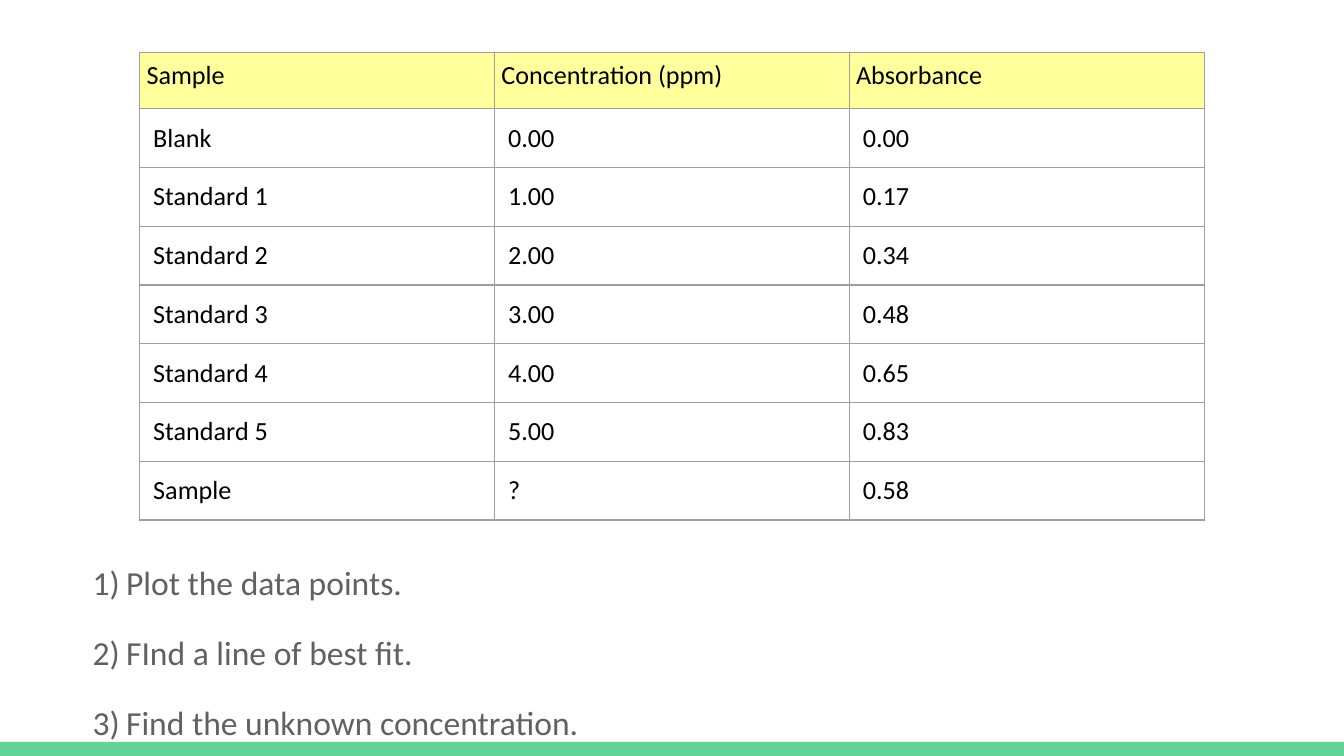
from lxml import etree
from pptx import Presentation, util as u
from pptx.dml.color import RGBColor
from pptx.enum import shapes
from pptx.oxml import ns

W = u.Inches(10)
H = W * 9 // 16
FONT = "Calibri"
GREEN = RGBColor(0x63, 0xD2, 0x97)
YELLOW = RGBColor(0xFF, 0xFF, 0x9C)
BLACK = RGBColor(0, 0, 0)
GREY = RGBColor(0x61, 0x61, 0x61)
BORDER = RGBColor(0x9E, 0x9E, 0x9E)

COL_WIDTH, ROW_HEIGHT = u.Inches(2.64), u.Inches(0.42)
READINGS = [
    ("Sample", "Concentration (ppm)", "Absorbance"),
    ("Blank", "0.00", "0.00"),
    ("Standard 1", "1.00", "0.17"),
    ("Standard 2", "2.00", "0.34"),
    ("Standard 3", "3.00", "0.48"),
    ("Standard 4", "4.00", "0.65"),
    ("Standard 5", "5.00", "0.83"),
    ("Sample", "?", "0.58"),
]
STEPS = ["Plot the data points.", "FInd a line of best fit.",
         "Find the unknown concentration."]


def set_font(p, size, color):
    p.font.name, p.font.size = FONT, u.Pt(size)
    p.font.color.rgb = color


def set_margins(box, inches):
    """Give a cell or a text frame the same inset on all sides."""
    box.margin_left = box.margin_right = u.Inches(inches)
    box.margin_top = box.margin_bottom = u.Inches(inches)


def add_footer_bar(s):
    top = u.Inches(5.52)
    sp = s.shapes.add_shape(shapes.MSO_SHAPE.RECTANGLE, 0, top, W, H - top)
    sp.shadow.inherit = False
    sp.fill.solid()
    sp.fill.fore_color.rgb = GREEN
    sp.line.fill.background()


def add_borders(cell):
    """Draw a thin line on each side; lines must precede the cell's fill."""
    tc_pr = cell._tc.get_or_add_tcPr()
    for i, side in enumerate(("lnL", "lnR", "lnT", "lnB")):
        ln = etree.Element(ns.qn(f"a:{side}"), w=str(u.Pt(0.75)))
        fill = etree.SubElement(ln, ns.qn("a:solidFill"))
        etree.SubElement(fill, ns.qn("a:srgbClr"), val=str(BORDER))
        tc_pr.insert(i, ln)


def fill_cell(cell, words, header):
    cell.text = words
    set_font(cell.text_frame.paragraphs[0], 14, BLACK)
    set_margins(cell, 0.05 if header else 0.1)
    if header:
        cell.fill.solid()
        cell.fill.fore_color.rgb = YELLOW
    else:
        cell.fill.background()
    add_borders(cell)


def add_readings(s, left, top):
    rows, cols = len(READINGS), len(READINGS[0])
    table = s.shapes.add_table(rows, cols, left, top,
                               cols * COL_WIDTH, rows * ROW_HEIGHT).table
    table.horz_banding = False
    for r, row in enumerate(READINGS):
        table.rows[r].height = ROW_HEIGHT
        for c, words in enumerate(row):
            fill_cell(table.cell(r, c), words, header=r == 0)
    for column in table.columns:
        column.width = COL_WIDTH


def number_paragraph(p):
    """Number a paragraph as 1), 2), ... with a hanging indent."""
    p_pr = p._p.get_or_add_pPr()
    p_pr.set("marL", str(u.Inches(0.5)))
    p_pr.set("indent", str(u.Inches(-0.25)))
    color = etree.SubElement(p_pr, ns.qn("a:buClr"))
    etree.SubElement(color, ns.qn("a:srgbClr"), val=str(GREY))
    etree.SubElement(p_pr, ns.qn("a:buFont"), typeface=FONT)
    etree.SubElement(p_pr, ns.qn("a:buAutoNum"), type="arabicParenR")


def add_steps(s, left, top, width, height):
    tf = s.shapes.add_textbox(left, top, width, height).text_frame
    tf.word_wrap = True
    set_margins(tf, 0.1)
    tf.text = "\n".join(STEPS)
    for p in tf.paragraphs:
        p.space_after = u.Pt(16)
        number_paragraph(p)
        set_font(p, 18, GREY)


def main():
    prs = Presentation()
    prs.slide_width, prs.slide_height = W, H
    s = prs.slides.add_slide(prs.slide_layouts[6])
    add_footer_bar(s)
    add_readings(s, (W - 3 * COL_WIDTH) // 2, u.Inches(0.39))
    margin = u.Inches(0.34)
    add_steps(s, margin, u.Inches(4.08), W - 2 * margin, u.Inches(1.38))
    prs.save("out.pptx")


if __name__ == "__main__":
    main()
